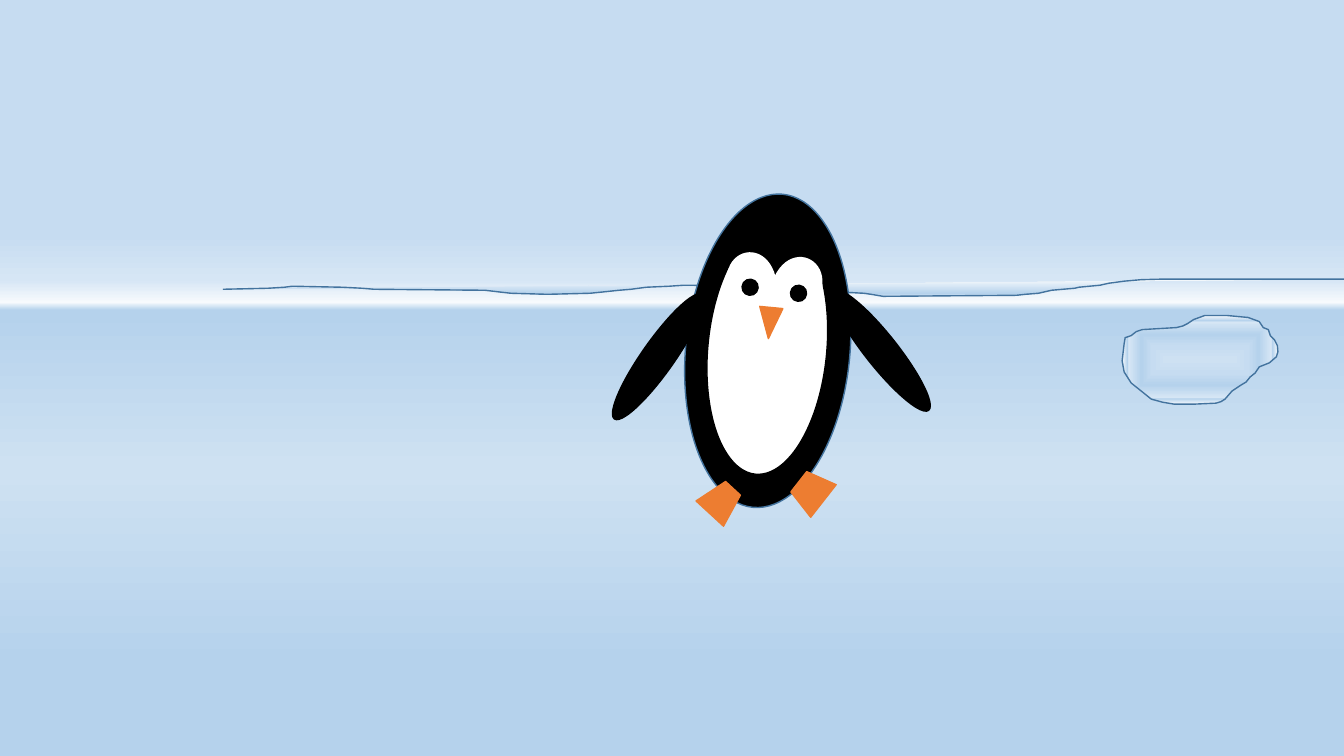
from lxml import etree
from pptx import Presentation
from pptx import util as u
from pptx.dml import color
from pptx.enum import shapes
from pptx.oxml import ns

BLACK, WHITE, ORANGE, BLUE = "000000", "FFFFFF", "ED7D31", "43739E"
TILT = 5.4  # degrees the penguin leans to the right

SKY_STOPS = [(31, "C6DCF1"), (37, "D6E6F5"), (40, "F7FAFD"),
             (41, "B5D2EC"), (62, "CEE1F2"), (88, "B5D2EC")]
SNOW_STOPS = [(0, "F7FAFD"), (83, "B5D2EC"), (84, "B5D2EC"), (100, "CEE1F2")]
ICE_STOPS = [(0, "CEE1F2"), (31, "C6DCF1"), (57, "B5D2EC"),
             (85, "D6E6F5"), (88, "B5D2EC"), (100, "F7FAFD")]

# Outlines as (column, row) points on the grid
HORIZON = [
    (22.1, 28.7), (26.6, 28.6), (28.2, 28.5), (29, 28.4), (34, 28.5),
    (35.9, 28.6), (37.1, 28.7), (48.1, 28.8), (49.8, 29), (50.7, 29.1),
    (54.3, 29.2), (58.5, 29.1), (59.5, 29), (61.4, 28.8), (62.6, 28.7),
    (64.1, 28.5), (66.4, 28.4), (67.8, 28.3), (79.7, 28.4), (81, 28.6),
    (82.4, 28.7), (83.8, 29), (85.7, 29.1), (86.4, 29.2), (87.6, 29.4),
    (100.8, 29.3), (101.7, 29.2), (103, 29.1), (104.3, 28.8), (106.6, 28.6),
    (107, 28.5), (109.1, 28.3), (110, 28.1), (111.5, 27.9), (113.2, 27.75),
    (115, 27.7), (134.2, 27.7)]
ICE_FLOE = [
    (121.5, 39.6), (121.1, 39.85), (120.6, 40), (118.3, 40.1), (116.5, 40.1),
    (115.3, 39.9), (114.2, 39.6), (112.2, 38), (111.5, 36.9), (111.3, 35.8),
    (111.5, 34.1), (111.6, 33.5), (112.2, 33.3), (112.7, 32.9), (113.3, 32.7),
    (116.7, 32.5), (117.3, 32.35), (117.8, 32.1), (118.4, 31.7), (119.5, 31.3),
    (121.7, 31.3), (123.8, 31.5), (124.9, 31.9), (125.3, 32.5), (125.8, 32.7),
    (126, 33.3), (126.4, 33.7), (126.7, 34.3), (126.75, 34.9), (126.6, 35.4),
    (125.9, 36), (124.9, 36.4), (124.5, 37), (124, 37.4), (123.6, 37.9),
    (123.1, 38.2), (122.2, 38.8)]


def rgb(value):
    return color.RGBColor.from_string(value)


class Scene:
    """Current slide on a grid of 75 rows with square cells."""

    rows = 75
    line_width = u.Pt(1)

    def __init__(self, presentation):
        self.cell = presentation.slide_height / self.rows
        self.slide = presentation.slides.add_slide(presentation.slide_layouts[6])

    def length(self, cells):
        return u.Emu(round(cells * self.cell))

    def style(self, shape, line):
        shape.shadow.inherit = False
        shape.line.color.rgb = rgb(line)
        shape.line.width = self.line_width

    def gradient(self, fill, element, stops, centred=False):
        """Give a fill its stops, running downwards or out from the centre."""
        fill.gradient()
        gradient = element.find(".//" + ns.qn("a:gradFill"))
        for child in list(gradient):
            gradient.remove(child)
        stop_list = etree.SubElement(gradient, ns.qn("a:gsLst"))
        for percent, value in stops:
            stop = etree.SubElement(stop_list, ns.qn("a:gs"), pos=str(percent * 1000))
            etree.SubElement(stop, ns.qn("a:srgbClr"), val=value)
        if centred:
            centre = etree.SubElement(gradient, ns.qn("a:path"), {"path": "shape"})
            etree.SubElement(centre, ns.qn("a:fillToRect"),
                             {side: "50000" for side in "ltrb"})
        else:
            etree.SubElement(gradient, ns.qn("a:lin"), ang="5400000", scaled="1")

    def background(self, stops):
        self.gradient(self.slide.background.fill, self.slide.element, stops)

    def outline(self, points, stops, closed=False):
        points = [(self.length(x), self.length(y)) for x, y in points]
        builder = self.slide.shapes.build_freeform(*points[0])
        builder.add_line_segments(points[1:], close=closed)
        shape = builder.convert_to_shape()
        self.gradient(shape.fill, shape.element, stops, centred=closed)
        self.style(shape, BLUE)

    def group(self, parts):
        group = self.slide.shapes.add_group_shape()
        for kind, box, rotation, fill, line in parts:
            shape = group.shapes.add_shape(kind, *map(self.length, box))
            shape.rotation = rotation
            shape.fill.solid()
            shape.fill.fore_color.rgb = rgb(fill)
            self.style(shape, line)


def main():
    presentation = Presentation()
    presentation.slide_width, presentation.slide_height = u.Inches(13.33), u.Inches(7.5)
    scene = Scene(presentation)

    # Sky, sea and snow line
    scene.background(SKY_STOPS)
    scene.outline(HORIZON, SNOW_STOPS)

    # Penguin: kind, (left, top, width, height), rotation, fill, line
    kind = shapes.MSO_SHAPE
    body = (kind.OVAL, (68, 19.2, 16.3, 31.2), TILT, BLACK, BLUE)
    belly = (kind.OVAL, (70.2, 22.2, 11.8, 24.9), TILT, WHITE, BLACK)
    forehead = (kind.OVAL, (72.2, 21.6, 9.5, 8.2), TILT, BLACK, BLACK)
    face = (kind.HEART, (72, 25.2, 9.3, 9.1), TILT, WHITE, WHITE)
    eyes = [(kind.OVAL, (left, top, 1.6, 1.6), TILT, BLACK, BLACK)
            for left, top in ((73.6, 27.7), (78.4, 28.3))]
    beak = (kind.ISOSCELES_TRIANGLE, (75.2, 30.5, 2.3, 3.1), 180 + TILT, ORANGE, ORANGE)
    wings = [(kind.OVAL, (left, top, 3.2, 15.15), rotation, BLACK, BLACK)
             for left, top, rotation in ((85.8, 27.2, 321.6), (63.7, 27.8, 35.2))]
    feet = [(kind.TRAPEZOID, box, rotation, ORANGE, ORANGE)
            for box, rotation in (((78.4, 47.2, 4.1, 3.1), 308),
                                  ((69.7, 48, 3.7, 3.4), 42.6))]
    scene.group([body, belly, forehead, face, *eyes, beak, *wings, *feet])

    # Ice floe
    scene.outline(ICE_FLOE, ICE_STOPS, closed=True)

    presentation.save("out.pptx")


if __name__ == "__main__":
    main()
